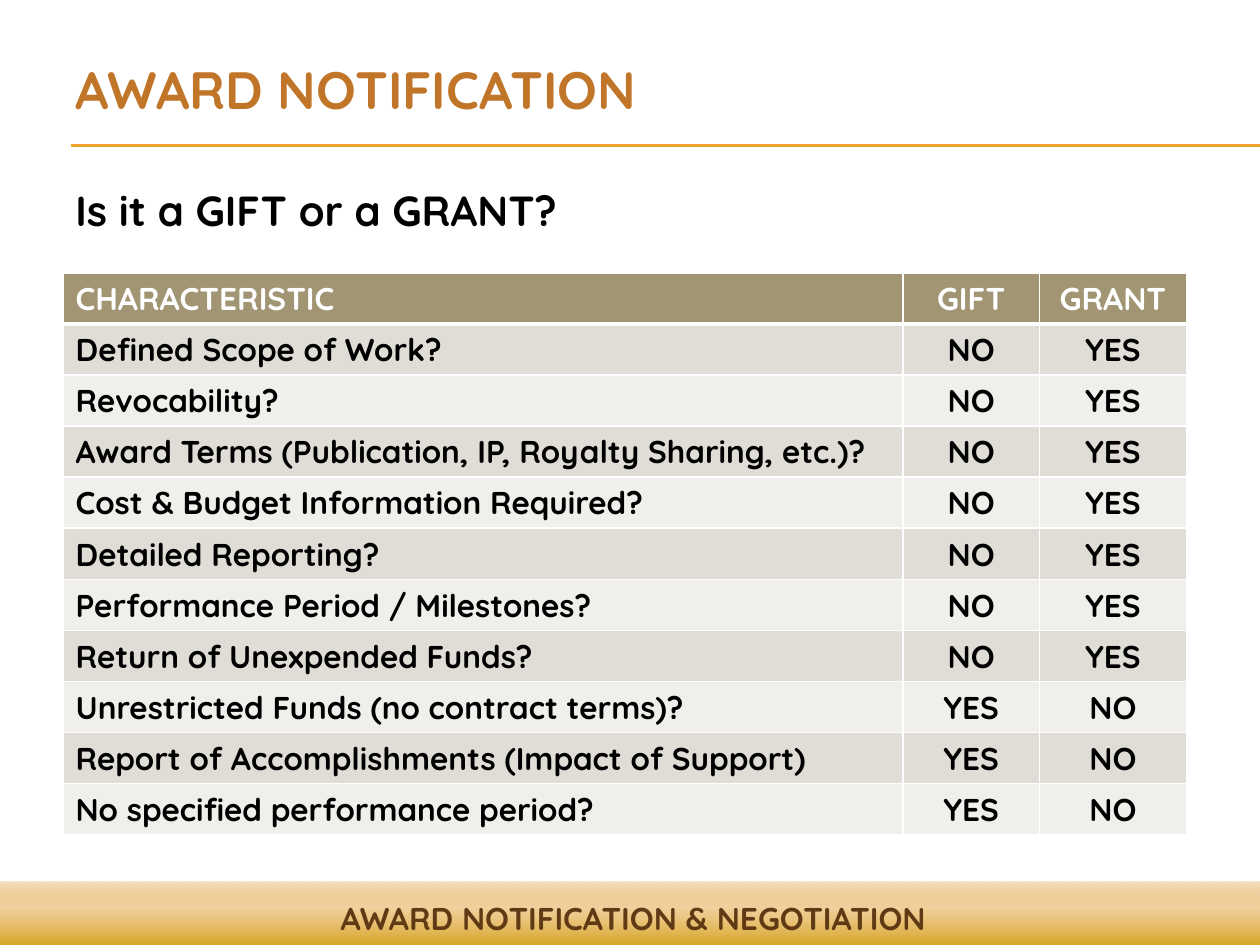
import pptx
import pptx.dml.color
import pptx.enum.shapes
import pptx.enum.text
import pptx.oxml
import pptx.oxml.ns
import pptx.util

RGBColor = pptx.dml.color.RGBColor
ALIGN = pptx.enum.text.PP_ALIGN
ANCHOR = pptx.enum.text.MSO_ANCHOR

WHITE = RGBColor(0xFF, 0xFF, 0xFF)
BLACK = RGBColor(0x00, 0x00, 0x00)
AMBER = RGBColor(0xF0, 0xA2, 0x2E)
COPPER = RGBColor(0xC1, 0x75, 0x29)
BROWN = RGBColor(0x60, 0x3A, 0x14)
KHAKI = RGBColor(0xA1, 0x95, 0x74)
BANDS = (RGBColor(0xE0, 0xDD, 0xD6), RGBColor(0xF0, 0xEF, 0xEB))
# Position, colour and opacity in percent, from the bottom of the footer up
FOOTER_STOPS = (
    (0, RGBColor(0xCC, 0x99, 0x00), 100),
    (65, RGBColor(0xEF, 0xC1, 0x7E), 75),
    (100, RGBColor(0xD6, 0x80, 0x00), 25),
)

COLUMNS, ROWS = 120, 90
COLUMN_WIDTHS = (80, 13, 14)
HEADER = ("CHARACTERISTIC", "GIFT", "GRANT")
GRANT_TRAITS = (
    "Defined Scope of Work?",
    "Revocability?",
    "Award Terms (Publication, IP, Royalty Sharing, etc.)?",
    "Cost & Budget Information Required?",
    "Detailed Reporting?",
    "Performance Period / Milestones?",
    "Return of Unexpended Funds?",
)
GIFT_TRAITS = (
    "Unrestricted Funds (no contract terms)?",
    "Report of Accomplishments (Impact of Support)",
    "No specified performance period?",
)


def element(xml):
    """Build an XML element from a fragment whose root holds the {ns} mark."""
    return pptx.oxml.parse_xml(xml.replace("{ns}", pptx.oxml.ns.nsdecls("a")))


class SlideBuilder:
    """Places elements on a slide by grid columns and rows."""

    font_name = "Quicksand"

    def __init__(self, deck):
        self.column = deck.slide_width / COLUMNS
        self.row = deck.slide_height / ROWS
        self.slide = deck.slides.add_slide(deck.slide_layouts[6])

    def across(self, columns):
        return pptx.util.Emu(round(columns * self.column))

    def down(self, rows):
        return pptx.util.Emu(round(rows * self.row))

    def place(self, left, top, width, height):
        return (self.across(left), self.down(top),
                self.across(width), self.down(height))

    def set_text(self, frame, text, size, color, align=ALIGN.LEFT):
        para = frame.paragraphs[0]
        para.text = text
        para.alignment = align
        para.font.name = self.font_name
        para.font.size = pptx.util.Pt(size)
        para.font.bold = True
        para.font.color.rgb = color

    def rule(self, left, right, row):
        line = self.slide.shapes.add_connector(
            pptx.enum.shapes.MSO_CONNECTOR.STRAIGHT,
            self.across(left), self.down(row),
            self.across(right), self.down(row))
        line.line.color.rgb = AMBER
        line.line.width = pptx.util.Pt(0.75)
        line._element.spPr.append(element("<a:effectLst {ns}/>"))

    def gradient_band(self, area, stops):
        band = self.slide.shapes.add_shape(
            pptx.enum.shapes.MSO_SHAPE.RECTANGLE, *self.place(*area))
        band.shadow.inherit = False
        band.line.fill.background()
        marks = "".join(
            f'<a:gs pos="{position * 1000}"><a:srgbClr val="{color}">'
            f'<a:alpha val="{opacity * 1000}"/></a:srgbClr></a:gs>'
            for position, color, opacity in stops)
        band._element.spPr.find(pptx.oxml.ns.qn("a:prstGeom")).addnext(element(
            f'<a:gradFill {{ns}} rotWithShape="1"><a:gsLst>{marks}</a:gsLst>'
            '<a:lin ang="16200000" scaled="0"/></a:gradFill>'))

    def text(self, area, text, size, color, align=ALIGN.LEFT, anchor=ANCHOR.TOP):
        box = self.slide.shapes.add_textbox(*self.place(*area))
        box.text_frame.word_wrap = True
        box.text_frame.vertical_anchor = anchor
        self.set_text(box.text_frame, text, size, color, align)

    def border(self, cell, widths):
        for side, points in zip("LRTB", widths):
            cell._tc.get_or_add_tcPr().append(element(
                f'<a:ln{side} {{ns}} w="{pptx.util.Pt(points)}"><a:solidFill>'
                f'<a:srgbClr val="{WHITE}"/></a:solidFill></a:ln{side}>'))

    def table(self, left, top, height, widths, records):
        """Draw a header row and banded rows, with all but column one centred."""
        table = self.slide.shapes.add_table(
            len(records), len(widths),
            *self.place(left, top, sum(widths), height)).table
        for column, width in zip(table.columns, widths):
            column.width = self.across(width)
        for index, record in enumerate(records):
            table.rows[index].height = self.down(height / len(records))
            fill = BANDS[(index - 1) % 2] if index else KHAKI
            color = BLACK if index else WHITE
            edges = (1, 1, 3 if index == 1 else 1, 1 if index else 3)
            for position, value in enumerate(record):
                cell = table.cell(index, position)
                self.border(cell, edges)
                cell.fill.solid()
                cell.fill.fore_color.rgb = fill
                self.set_text(cell.text_frame, value, 18, color,
                              ALIGN.CENTER if position else ALIGN.LEFT)


def main():
    deck = pptx.Presentation()
    deck.slide_width = pptx.util.Inches(10)
    deck.slide_height = pptx.util.Inches(7.5)
    page = SlideBuilder(deck)

    for row in (13.8, 13.9):
        page.rule(6.75, COLUMNS, row)
    page.gradient_band((-0.1, 84, 120.3, 7), FOOTER_STOPS)
    page.text((1.8, 85, 117, 4.8), "AWARD NOTIFICATION & NEGOTIATION",
              18, BROWN, align=ALIGN.CENTER)
    page.text((6, 3.6, 106, 8.4), "AWARD NOTIFICATION", 30, COPPER,
              anchor=ANCHOR.BOTTOM)
    page.text((6, 17, 110, 6), "Is it a GIFT or a GRANT?", 24, BLACK)

    records = [HEADER]
    records += [(trait, "NO", "YES") for trait in GRANT_TRAITS]
    records += [(trait, "YES", "NO") for trait in GIFT_TRAITS]
    page.table(6, 26, 53.5, COLUMN_WIDTHS, records)

    deck.save("out.pptx")


if __name__ == "__main__":
    main()
